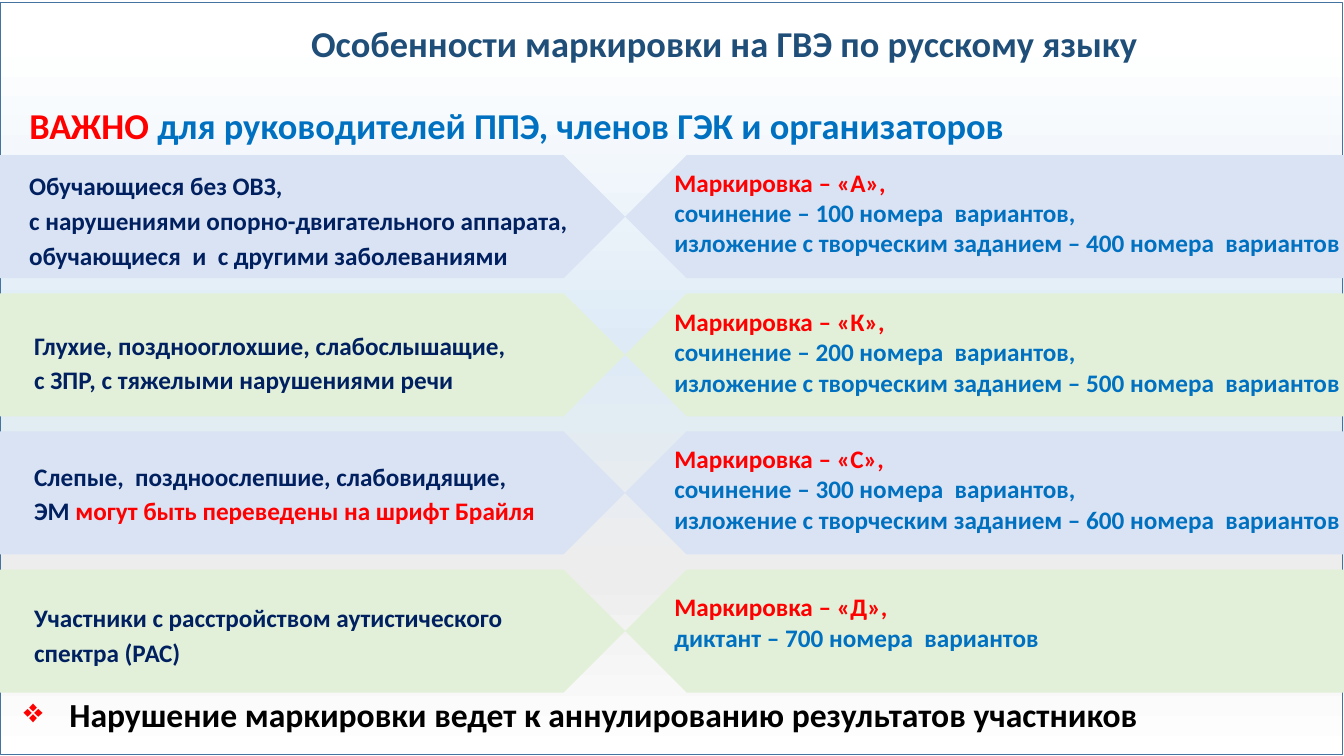
import pptx
import pptx.util
import pptx.dml.color
import pptx.enum.shapes
import pptx.enum.text
import pptx.oxml.ns
from lxml import etree

COLORS = {
    "title": "1F4E79", "navy": "002060", "blue": "0070C0", "red": "FF0000", "black": "000000",
    "frame": "43739E", "blue_band": "DAE3F3", "green_band": "E2F0D9",
}
BACKGROUND_STOPS = [(5, "FFFFFF"), (46, "DEEBF6"), (76, "EDEDED"), (100, "FFFFFF")]

HEADINGS = [
    {"left": 1.31, "top": 0, "size": 26, "bullet": None,
     "runs": [("Особенности маркировки на ГВЭ по русскому языку", "title")]},
    {"left": -0.75, "top": 0.81, "size": 26, "bullet": None,
     "runs": [("ВАЖНО", "red"), (" для руководителей ППЭ, членов ГЭК и организаторов", "blue")]},
    {"left": -0.12, "top": 6.65, "size": 24, "bullet": "❖",
     "runs": [(" ", "red"),
              ("Нарушение маркировки ведет к аннулированию результатов участников", "black")]},
]
ROWS = [
    {"group_box": (0.19, 1.6, 5.77, 1.15), "marking_top": 1.61,
     "group": [[("Обучающиеся без ОВЗ,", "navy")],
               [("с нарушениями опорно-двигательного аппарата,", "navy")],
               [("обучающиеся  и  с другими заболеваниями", "navy")]],
     "letter": "А",
     "works": ["сочинение – 100 номера  вариантов,",
               "изложение с творческим заданием – 400 номера  вариантов"]},
    {"group_box": (0.24, 3.18, 5.17, 0.8), "marking_top": 2.99,
     "group": [[("Глухие, позднооглохшие, слабослышащие,", "navy")],
               [("с ЗПР, с тяжелыми нарушениями речи", "navy")]],
     "letter": "К",
     "works": ["сочинение – 200 номера  вариантов,",
               "изложение с творческим заданием – 500 номера  вариантов"]},
    {"group_box": (0.24, 4.48, 5.93, 0.8), "marking_top": 4.35,
     "group": [[("Слепые,  поздноослепшие, слабовидящие,", "navy")],
               [("ЭМ ", "navy"), ("могут быть переведены на шрифт Брайля", "red")]],
     "letter": "С",
     "works": ["сочинение – 300 номера  вариантов,",
               "изложение с творческим заданием – 600 номера  вариантов"]},
    {"group_box": (0.24, 5.88, 5.25, 0.8), "marking_top": 5.82,
     "group": [[("Участники с расстройством аутистического спектра (РАС)", "navy")]],
     "letter": "Д",
     "works": ["диктант – 700 номера  вариантов"]},
]

WIDTH, HEIGHT = 13.33, 7.5
MIDDLE = 6.2
BAND_TOP, BAND_PITCH, BAND_HEIGHT = 1.54, 1.37, 1.22
HEADING_WIDTH, HEADING_HEIGHT = 11.76, 0.91
MARKING_WIDTH = 7.99
LINE_HEIGHT = 0.3

inches = pptx.util.Inches
qn = pptx.oxml.ns.qn


def color(name):
    return pptx.dml.color.RGBColor.from_string(COLORS[name])


def paint_background(slide):
    fill = slide.background.fill
    fill.gradient()
    fill.gradient_angle = 270
    stops = next(slide.element.iter(qn("a:gsLst")))
    for stop in list(stops):
        stops.remove(stop)
    for position, value in BACKGROUND_STOPS:
        stop = etree.SubElement(stops, qn("a:gs"), pos=str(position * 1000))
        etree.SubElement(stop, qn("a:srgbClr"), val=value)


def add_frame(slide):
    frame = slide.shapes.add_shape(
        pptx.enum.shapes.MSO_SHAPE.RECTANGLE, 0, inches(0.02), inches(13.31), inches(7.46))
    frame.shadow.inherit = False
    frame.fill.background()
    frame.line.color.rgb = color("frame")
    frame.line.width = pptx.util.Pt(0.25)


def add_band(slide, left, top, width, fill, flipped):
    band = slide.shapes.add_shape(
        pptx.enum.shapes.MSO_SHAPE.PENTAGON,
        inches(left), inches(top), inches(width), inches(BAND_HEIGHT))
    band.shadow.inherit = False
    band.fill.solid()
    band.fill.fore_color.rgb = color(fill)
    band.line.fill.background()
    if flipped:
        band.element.spPr.get_or_add_xfrm().set("flipH", "1")


def add_text(slide, box, lines, size=18, spacing=1.0, indent=0, hanging=0, bullet=None):
    text_box = slide.shapes.add_textbox(*map(inches, box))
    frame = text_box.text_frame
    frame.word_wrap = True
    for number, runs in enumerate(lines):
        paragraph = frame.paragraphs[0] if number == 0 else frame.add_paragraph()
        paragraph.line_spacing = spacing
        if indent:
            properties = paragraph._p.get_or_add_pPr()
            properties.set("marL", str(inches(indent)))
            properties.set("indent", str(-inches(hanging)))
            if bullet:
                etree.SubElement(properties, qn("a:buChar"), char=bullet)
        paragraph.font.size = pptx.util.Pt(size)
        paragraph.font.name = "Calibri"
        paragraph.font.bold = True
        for text, name in runs:
            run = paragraph.add_run()
            run.text = text
            run.font.color.rgb = color(name)
    return frame


def add_heading(slide, heading):
    bullet = heading["bullet"]
    frame = add_text(
        slide, (heading["left"], heading["top"], HEADING_WIDTH, HEADING_HEIGHT),
        [heading["runs"]], heading["size"], 0.9,
        0.38 if bullet else 0, 0.38 if bullet else 0, bullet)
    frame.vertical_anchor = pptx.enum.text.MSO_ANCHOR.MIDDLE
    frame.margin_left = frame.margin_right = frame.margin_top = frame.margin_bottom = inches(0.04)
    frame.paragraphs[0].alignment = pptx.enum.text.PP_ALIGN.CENTER


def main():
    presentation = pptx.Presentation()
    presentation.slide_width, presentation.slide_height = inches(WIDTH), inches(HEIGHT)
    slide = presentation.slides.add_slide(presentation.slide_layouts[6])
    paint_background(slide)
    add_frame(slide)
    for number, row in enumerate(ROWS):
        top = BAND_TOP + number * BAND_PITCH
        fill = ("blue_band", "green_band")[number % 2]
        add_band(slide, MIDDLE, top, WIDTH - MIDDLE, fill, True)
        add_band(slide, 0, top, MIDDLE, fill, False)
        add_text(slide, row["group_box"], row["group"], spacing=1.15)
        marking = [[(f"Маркировка – «{row['letter']}»,", "red")]]
        marking += [[(work, "blue")] for work in row["works"]]
        height = 0.1 + LINE_HEIGHT * len(marking)
        add_text(slide, (MIDDLE, row["marking_top"], MARKING_WIDTH, height), marking, indent=0.39)
    for heading in HEADINGS:
        add_heading(slide, heading)
    presentation.save("out.pptx")


if __name__ == "__main__":
    main()
